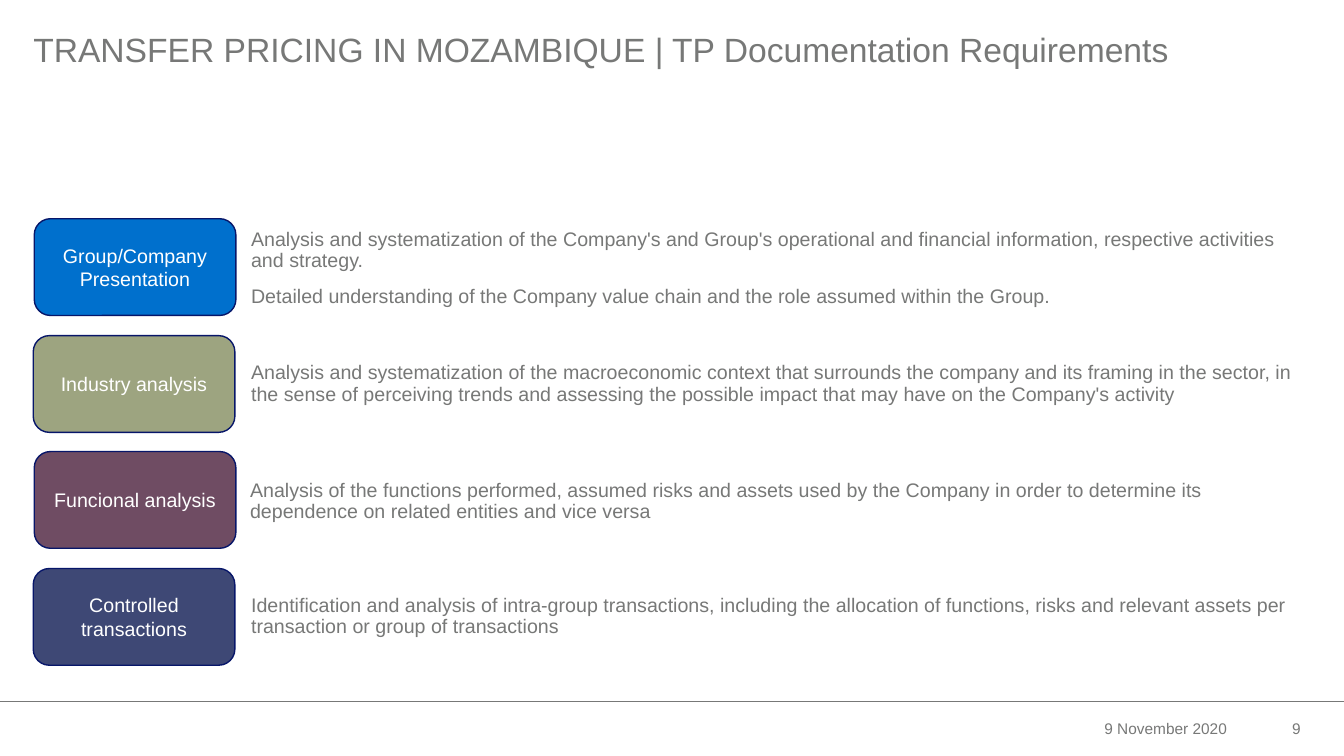
"""Build the slide on transfer pricing documentation requirements in Mozambique."""
from dataclasses import dataclass

from lxml.etree import SubElement
from pptx import Presentation
from pptx.dml.color import RGBColor
from pptx.enum.shapes import MSO_CONNECTOR, MSO_SHAPE
from pptx.enum.text import MSO_ANCHOR, MSO_AUTO_SIZE, PP_ALIGN
from pptx.oxml.ns import qn
from pptx.util import Pt

EMU_PER_PX = 9144
WIDTH, HEIGHT = 1333, 750


@dataclass(frozen=True)
class Theme:
    font: str = "Arial"
    grey: str = "777877"
    white: str = "FFFFFF"
    outline: str = "071669"
    blue: str = "0070CD"
    olive: str = "9DA480"
    plum: str = "6F4C63"
    indigo: str = "3E4875"
    title_size: int = 24
    body_size: int = 14
    footer_size: int = 11


def px(length):
    return length * EMU_PER_PX


def rgb(colour):
    return RGBColor.from_string(colour)


def write(frame, *paragraphs, font, size, colour, align=PP_ALIGN.LEFT,
          anchor=MSO_ANCHOR.TOP, insets=(10, 5, 10, 5), spacing=1.0, gap=0):
    frame.word_wrap = True
    frame.auto_size = MSO_AUTO_SIZE.NONE
    frame.vertical_anchor = anchor
    (frame.margin_left, frame.margin_top,
     frame.margin_right, frame.margin_bottom) = map(px, insets)
    for index, words in enumerate(paragraphs):
        paragraph = frame.add_paragraph() if index else frame.paragraphs[0]
        paragraph.alignment = align
        paragraph.line_spacing = spacing
        paragraph.space_before = Pt(gap if index else 0)
        run = paragraph.add_run()
        run.text = words
        run.font.name = font
        run.font.size = Pt(size)
        run.font.color.rgb = rgb(colour)


class SlideBuilder:
    def __init__(self, slide, theme):
        self.slide = slide
        self.theme = theme

    def title(self, words, *box):
        heading = self.slide.shapes.title
        heading.left, heading.top, heading.width, heading.height = map(px, box)
        write(heading.text_frame, words, font=self.theme.font,
              size=self.theme.title_size, colour=self.theme.grey,
              insets=(0, 0, 0, 5), spacing=0.9)

    def text(self, paragraphs, *box, **style):
        textbox = self.slide.shapes.add_textbox(*map(px, box))
        write(textbox.text_frame, *paragraphs, font=self.theme.font,
              colour=self.theme.grey, **style)

    def topic(self, words, fill, *box):
        card = self.slide.shapes.add_shape(
            MSO_SHAPE.ROUNDED_RECTANGLE, *map(px, box))
        card.shadow.inherit = False
        card.fill.solid()
        card.fill.fore_color.rgb = rgb(fill)
        card.line.color.rgb = rgb(self.theme.outline)
        card.line.width = Pt(1)
        write(card.text_frame, words, font=self.theme.font,
              size=self.theme.body_size, colour=self.theme.white,
              align=PP_ALIGN.CENTER, anchor=MSO_ANCHOR.MIDDLE)

    def rule(self, *ends):
        divider = self.slide.shapes.add_connector(
            MSO_CONNECTOR.STRAIGHT, *map(px, ends))
        divider.line.color.rgb = rgb(self.theme.grey)
        divider.line.width = Pt(0.5)
        SubElement(divider._element.spPr, qn("a:effectLst"))


def main():
    theme = Theme()
    deck = Presentation()
    deck.slide_width, deck.slide_height = px(WIDTH), px(HEIGHT)
    builder = SlideBuilder(deck.slides.add_slide(deck.slide_layouts[5]), theme)

    builder.title("TRANSFER PRICING IN MOZAMBIQUE | TP Documentation Requirements",
                  33, 33, 1266, 39)

    requirements = [
        ("Group/Company Presentation", theme.blue, 34, (249, 220, 1051, 96), [
            "Analysis and systematization of the Company's and Group's operational "
            "and financial information, respective activities and strategy.",
            "Detailed understanding of the Company value chain and the role "
            "assumed within the Group."]),
        ("Industry analysis", theme.olive, 33, (249, 352, 1051, 61), [
            "Analysis and systematization of the macroeconomic context that "
            "surrounds the company and its framing in the sector, in the sense of "
            "perceiving trends and assessing the possible impact that may have on "
            "the Company's activity"]),
        ("Funcional analysis", theme.plum, 34, (248, 469, 1051, 61), [
            "Analysis of the functions performed, assumed risks and assets used by "
            "the Company in order to determine its dependence on related entities "
            "and vice versa"]),
        ("Controlled transactions", theme.indigo, 33, (249, 583, 1051, 61), [
            "Identification and analysis of intra-group transactions, including the "
            "allocation of functions, risks and relevant assets per transaction or "
            "group of transactions"]),
    ]
    first_top, last_top = 217, 564
    pitch = (last_top - first_top) / (len(requirements) - 1)
    for row, (topic, fill, left, detail_box, details) in enumerate(requirements):
        builder.topic(topic, fill, left, round(first_top + row * pitch), 200, 96)
        builder.text(details, *detail_box, size=theme.body_size,
                     insets=(0, 8, 0, 8), spacing=0.9, gap=10)

    builder.rule(0, 696, WIDTH, 696)
    for words, left, width in [("9 November 2020", 906, 321), ("9", 1155, 145)]:
        builder.text([words], left, 696, width, 53, size=theme.footer_size,
                     align=PP_ALIGN.RIGHT, anchor=MSO_ANCHOR.MIDDLE)

    deck.save("out.pptx")


if __name__ == "__main__":
    main()
